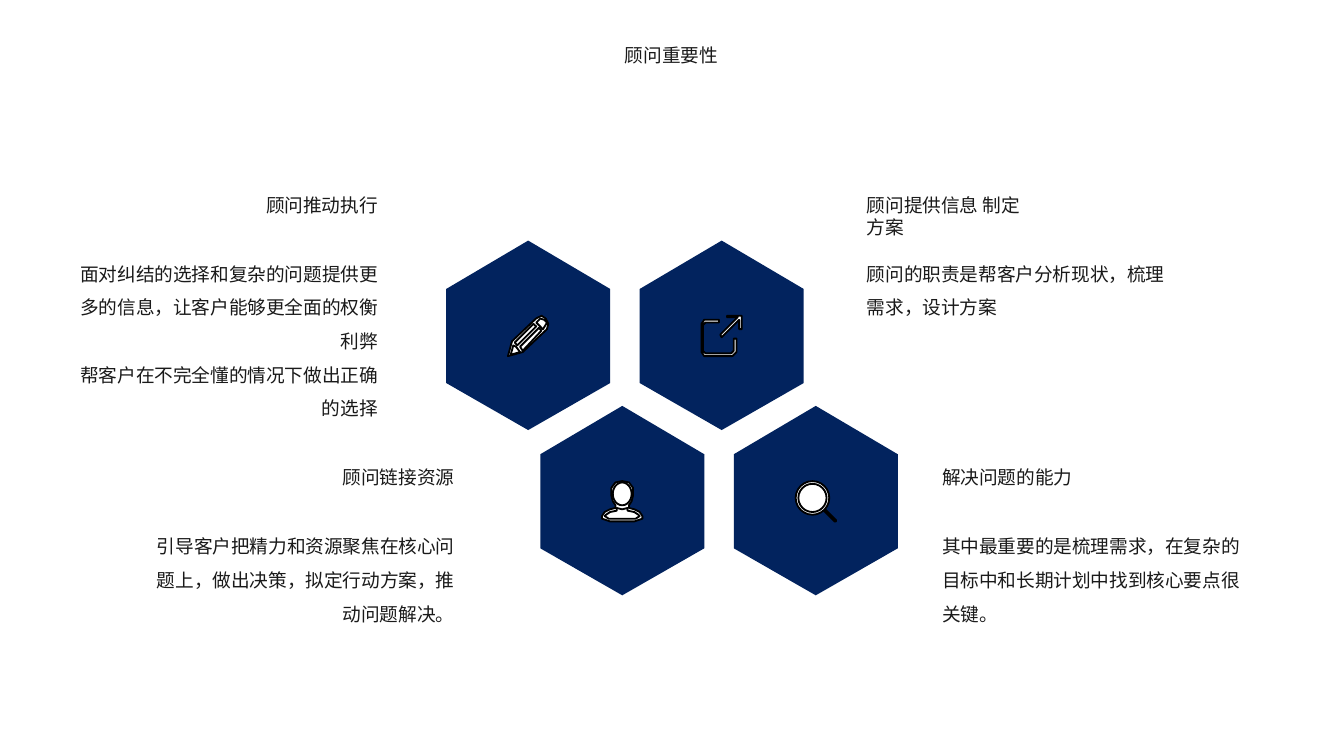
from dataclasses import dataclass

from lxml import etree
from pptx import Presentation
from pptx.dml.color import RGBColor
from pptx.enum.shapes import MSO_SHAPE
from pptx.enum.text import MSO_AUTO_SIZE, PP_ALIGN
from pptx.oxml.ns import qn
from pptx.util import Inches, Pt

OVAL = MSO_SHAPE.OVAL
LEFT, RIGHT, CENTER = PP_ALIGN.LEFT, PP_ALIGN.RIGHT, PP_ALIGN.CENTER
GROW = MSO_AUTO_SIZE.SHAPE_TO_FIT_TEXT


@dataclass(frozen=True)
class Theme:
    navy: RGBColor = RGBColor(0x02, 0x23, 0x5E)
    white: RGBColor = RGBColor(0xFF, 0xFF, 0xFF)
    black: RGBColor = RGBColor(0, 0, 0)
    ink: RGBColor = RGBColor(0x1A, 0x1A, 0x1A)
    font: str = "Noto Sans CJK SC"
    size: Pt = Pt(10)
    line: Pt = Pt(1)


THEME = Theme()
HEX = [(0, -0.71), (0.61, -0.35), (0.61, 0.35),
       (0, 0.7), (-0.61, 0.35), (-0.61, -0.35)]


def mirror(half):
    return half + [(-x, y) for x, y in reversed(half)]


def paint(shape, fill, line):
    shape.shadow.inherit = False
    if fill is None:
        shape.fill.background()
    else:
        shape.fill.solid()
        shape.fill.fore_color.rgb = fill
    if line is None:
        shape.line.fill.background()
    else:
        shape.line.color.rgb = line
        shape.line.width = THEME.line


def add_poly(shapes, mid, points, fill=None, line=THEME.black, unit=0.01):
    spots = [(Inches(mid[0] + x * unit), Inches(mid[1] + y * unit))
             for x, y in points]
    pen = shapes.build_freeform(*spots[0])
    pen.add_line_segments(spots[1:], close=True)
    paint(pen.convert_to_shape(), fill, line)


def add_oval(shapes, mid, box, fill=None):
    x, y, w, h = box
    oval = shapes.add_shape(OVAL, Inches(mid[0] + x), Inches(mid[1] + y),
                            Inches(w), Inches(h))
    paint(oval, fill, THEME.black)


def draw_pencil(shapes, mid):
    body = [(6, -13), (-12, 4), (-15, 15), (-4, 12), (14, -5),
            (15, -9), (13, -13), (10, -15)]
    marks = [
        [(-10, 5), (4, -9), (6, -7), (-8, 7)],
        [(-6, 8), (8, -6), (10, -4), (-4, 11)],
        [(-13, 14), (-11, 7), (-9, 8), (-6, 12)],
        [(6, -10), (9, -13), (12, -12), (14, -10), (11, -5)],
    ]
    add_poly(shapes, mid, body, THEME.white)
    for mark in marks:
        add_poly(shapes, mid, mark)


def draw_share(shapes, mid):
    frame = [(-2, -12), (-13, -12), (-15, -9), (-15, 12), (-13, 15),
             (8, 15), (11, 12), (11, 2), (9, 2), (9, 11), (7, 13),
             (-12, 13), (-14, 11), (-14, -8), (-12, -10), (-2, -10)]
    arrow = [(15, -15), (4, -15), (4, -14), (12, -14), (-1, -1),
             (0, 1), (13, -12), (13, -5), (15, -5)]
    for part in (frame, arrow):
        add_poly(shapes, mid, part, THEME.white)


def draw_person(shapes, mid):
    body = [(0, -15), (-5, -14), (-8, -10), (-8, -4), (-7, 0), (-5, 3),
            (-5, 5), (-9, 6), (-13, 8), (-15, 11), (-15, 13), (-9, 15),
            (0, 15)]
    chest = [(0, 6), (-4, 5), (-4, 7), (-9, 8), (-12, 10), (-13, 11),
             (-10, 13), (0, 13)]
    add_poly(shapes, mid, mirror(body), THEME.white)
    add_poly(shapes, mid, mirror(chest))
    add_oval(shapes, mid, (-0.07, -0.14, 0.14, 0.17))


def draw_lens(shapes, mid):
    grip = [(6, 7), (14, 15), (15, 15), (15, 14), (7, 6)]
    add_poly(shapes, mid, grip, THEME.white)
    add_oval(shapes, mid, (-0.15, -0.15, 0.25, 0.25), THEME.white)
    add_oval(shapes, mid, (-0.13, -0.13, 0.21, 0.21))


def add_tile(slide, mid, draw):
    shapes = slide.shapes.add_group_shape().shapes
    add_poly(shapes, mid, HEX, THEME.navy, None, 1)
    draw(shapes, mid)


def add_text(shapes, box, lines, align, space=None):
    frame = shapes.add_textbox(*map(Inches, box)).text_frame
    frame.word_wrap = True
    frame.auto_size = GROW
    frame.margin_left = frame.margin_right = Inches(0.05)
    frame.margin_top = frame.margin_bottom = Inches(0.05)
    for i, line in enumerate(lines):
        para = frame.add_paragraph() if i else frame.paragraphs[0]
        para.alignment = align
        if space:
            para.line_spacing = space
        run = para.add_run()
        run.text = line
        font = run.font
        font.name, font.size = THEME.font, THEME.size
        font.color.rgb = THEME.ink
        east = etree.SubElement(run._r.get_or_add_rPr(), qn("a:ea"))
        east.set("typeface", THEME.font)


def add_note(slide, edge, top, align, head, body, sizes):
    shapes = slide.shapes.add_group_shape().shapes
    blocks = [(top, 1.28, sizes[0], [head], None),
              (top + 0.43, 2.38, sizes[1], body, 1.5)]
    for y, width, height, lines, space in blocks:
        x = edge - width if align == RIGHT else edge
        add_text(shapes, (x, y, width, height), lines, align, space)


def main():
    deck = Presentation()
    deck.slide_width = Inches(10)
    deck.slide_height = deck.slide_width * 9 // 16
    slide = deck.slides.add_slide(deck.slide_layouts[6])
    add_text(slide.shapes, (3.7, 0.28, 2.59, 0.29), ["顾问重要性"], CENTER)

    rows = [(3.93, 2.5, (draw_pencil, draw_share)),
            (4.63, 3.73, (draw_person, draw_lens))]
    for x, y, icons in rows:
        for i, draw in enumerate(icons):
            add_tile(slide, (x + i * 1.44, y), draw)

    notes = [
        (2.86, 1.39, RIGHT, "顾问推动执行",
         ["面对纠结的选择和复杂的问题提供更多的信息，让客户能够更全面的权衡利弊",
          "帮客户在不完全懂的情况下做出正确的选择"], (0.29, 1.46)),
        (3.43, 3.42, RIGHT, "顾问链接资源",
         ["引导客户把精力和资源聚焦在核心问题上，做出决策，拟定行动方案，推动问题解决。"],
         (0.29, 0.88)),
        (6.4, 1.39, LEFT, "顾问提供信息 制定方案",
         ["顾问的职责是帮客户分析现状，梳理需求，设计方案"], (0.49, 0.59)),
        (6.96, 3.42, LEFT, "解决问题的能力",
         ["其中最重要的是梳理需求，在复杂的目标中和长期计划中找到核心要点很关键。"],
         (0.29, 0.88)),
    ]
    for note in notes:
        add_note(slide, *note)
    deck.save("out.pptx")


if __name__ == "__main__":
    main()
